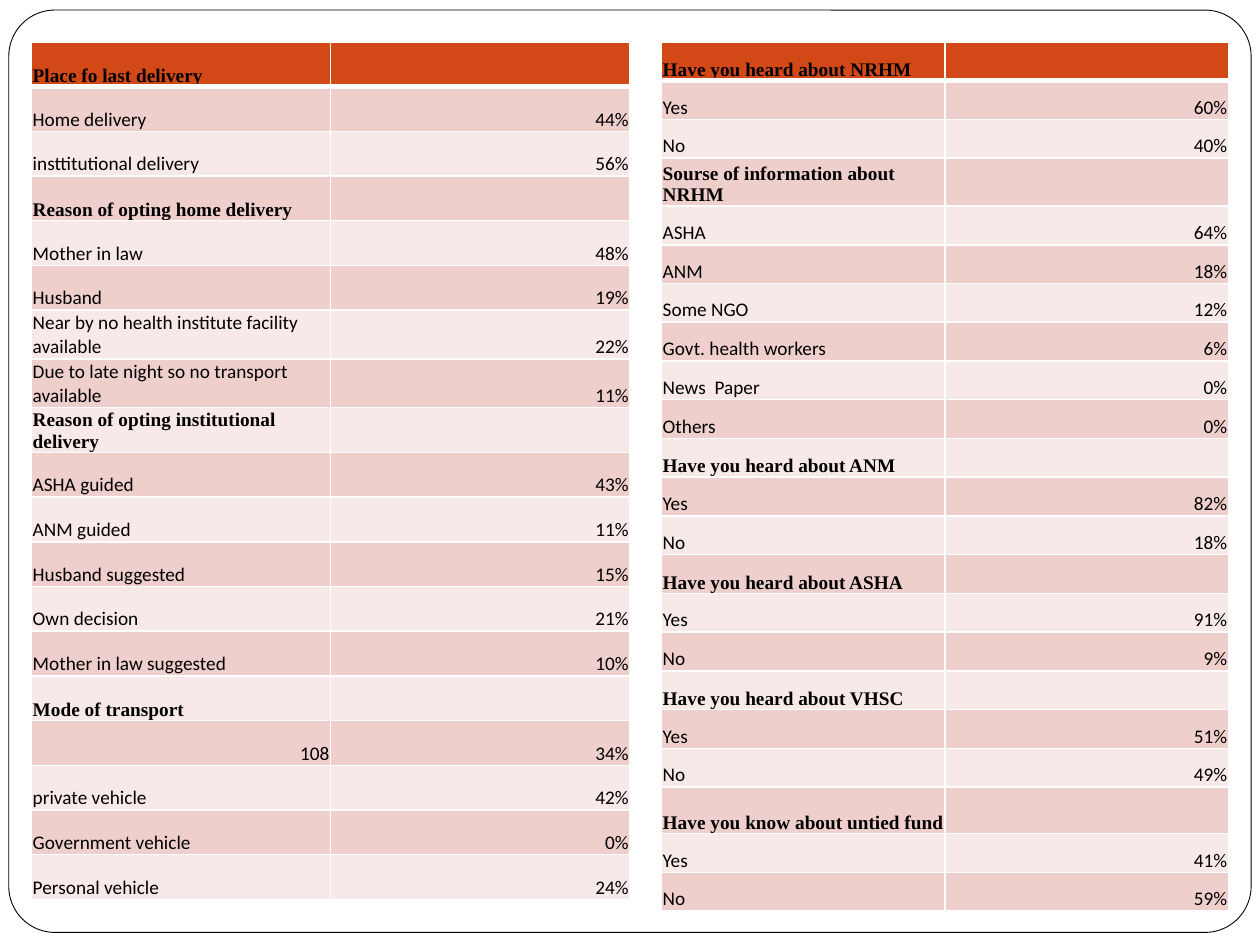
from dataclasses import dataclass
from typing import Any

from lxml import etree
from pptx import Presentation
from pptx import util as u
from pptx.dml.color import RGBColor
from pptx.enum import shapes, text
from pptx.oxml.ns import qn

DELIVERY = [
    ("Place fo last delivery", ""),
    ("Home delivery", "44%"),
    ("insttitutional delivery", "56%"),
    ("Reason of opting home delivery", ""),
    ("Mother in law", "48%"),
    ("Husband", "19%"),
    ("Near by no health institute facility available", "22%"),
    ("Due to late night so no transport available", "11%"),
    ("Reason of opting institutional delivery", ""),
    ("ASHA guided", "43%"),
    ("ANM guided", "11%"),
    ("Husband suggested", "15%"),
    ("Own decision", "21%"),
    ("Mother in law suggested", "10%"),
    ("Mode of transport", ""),
    ("108", "34%"),
    ("private vehicle", "42%"),
    ("Government vehicle", "0%"),
    ("Personal vehicle", "24%"),
]
AWARENESS = [
    ("Have you heard about NRHM", ""),
    ("Yes", "60%"),
    ("No", "40%"),
    ("Sourse of information about NRHM", ""),
    ("ASHA", "64%"),
    ("ANM", "18%"),
    ("Some NGO", "12%"),
    ("Govt. health workers", "6%"),
    ("News  Paper", "0%"),
    ("Others", "0%"),
    ("Have you heard about ANM", ""),
    ("Yes", "82%"),
    ("No", "18%"),
    ("Have you heard about ASHA", ""),
    ("Yes", "91%"),
    ("No", "9%"),
    ("Have you heard about VHSC", ""),
    ("Yes", "51%"),
    ("No", "49%"),
    ("Have you know about untied fund", ""),
    ("Yes", "41%"),
    ("No", "59%"),
]


def color(value):
    """Turn a hex string into a colour."""
    return RGBColor.from_string(value)


@dataclass
class SurveySlide:
    """Style and current slide, measured on a grid of quarter inches."""

    slide: Any
    unit: float = 0.25
    ink: str = "000000"
    paper: str = "FFFFFF"
    header: str = "D34817"
    bands: tuple = ("F7E9E8", "EFCFCC")
    heading_font: str = "Times New Roman"
    body_font: str = "Calibri"
    size: int = 11

    def grid(self, *counts):
        """Convert grid counts into lengths."""
        return [u.Inches(count * self.unit) for count in counts]

    def frame(self, left, top, width, height):
        """Draw the rounded outline around the slide."""
        shape = self.slide.shapes.add_shape(
            shapes.MSO_SHAPE.ROUNDED_RECTANGLE, *self.grid(left, top, width, height))
        shape.adjustments[0] = 0.05
        shape.shadow.inherit = False
        shape.fill.solid()
        shape.fill.fore_color.rgb = color(self.paper)
        shape.line.color.rgb = color(self.ink)
        shape.line.width = u.Pt(0.5)

    def borders(self, cell, row):
        """Rule a cell on all sides, thickly below the header row."""
        properties = cell._tc.get_or_add_tcPr()
        widths = {"L": 1, "R": 1, "T": 3 if row == 1 else 1, "B": 3 if row == 0 else 1}
        for side, width in widths.items():
            line = etree.SubElement(properties, qn(f"a:ln{side}"), w=str(int(u.Pt(width))))
            fill = etree.SubElement(line, qn("a:solidFill"))
            etree.SubElement(fill, qn("a:srgbClr"), val=self.paper)

    def label(self, cell, words, heading, right):
        """Put one run of text at the bottom of a cell."""
        cell.vertical_anchor = text.MSO_ANCHOR.BOTTOM
        cell.margin_left = cell.margin_right = cell.margin_top = u.Inches(0.01)
        cell.margin_bottom = 0
        paragraph = cell.text_frame.paragraphs[0]
        if not words:
            etree.SubElement(paragraph._p, qn("a:endParaRPr"), sz=str(self.size * 100))
            return
        paragraph.alignment = text.PP_ALIGN.RIGHT if right else text.PP_ALIGN.LEFT
        run = paragraph.add_run()
        run.text = words
        run.font.name = self.heading_font if heading else self.body_font
        run.font.size = u.Pt(self.size)
        run.font.bold = heading
        run.font.color.rgb = color(self.ink)

    def table(self, left, top, width, row_height, entries, tall_rows=None):
        """Build a banded table of answers and their shares."""
        heights = [row_height] * len(entries)
        for row, height in (tall_rows or {}).items():
            heights[row] = height
        table = self.slide.shapes.add_table(
            len(entries), 2, *self.grid(left, top, width, sum(heights))).table
        for row, (entry, height) in enumerate(zip(entries, self.grid(*heights))):
            table.rows[row].height = height
            for column, words in enumerate(entry):
                cell = table.cell(row, column)
                self.borders(cell, row)
                cell.fill.solid()
                cell.fill.fore_color.rgb = color(self.bands[row % 2] if row else self.header)
                self.label(cell, words, heading=not entry[1],
                           right=column == 1 or words.isdigit())


def main():
    """Build and save the survey slide."""
    presentation = Presentation()
    presentation.slide_width, presentation.slide_height = u.Inches(10), u.Inches(7.5)
    survey = SurveySlide(presentation.slides.add_slide(presentation.slide_layouts[6]))
    survey.frame(0.28, 0.32, 39.44, 29.28)
    survey.table(21, 1.33, 18, 1.23, AWARENESS, tall_rows={3: 1.52, 19: 1.48})
    survey.table(1, 1.33, 19, 1.42, DELIVERY)
    presentation.save("out.pptx")


if __name__ == "__main__":
    main()
